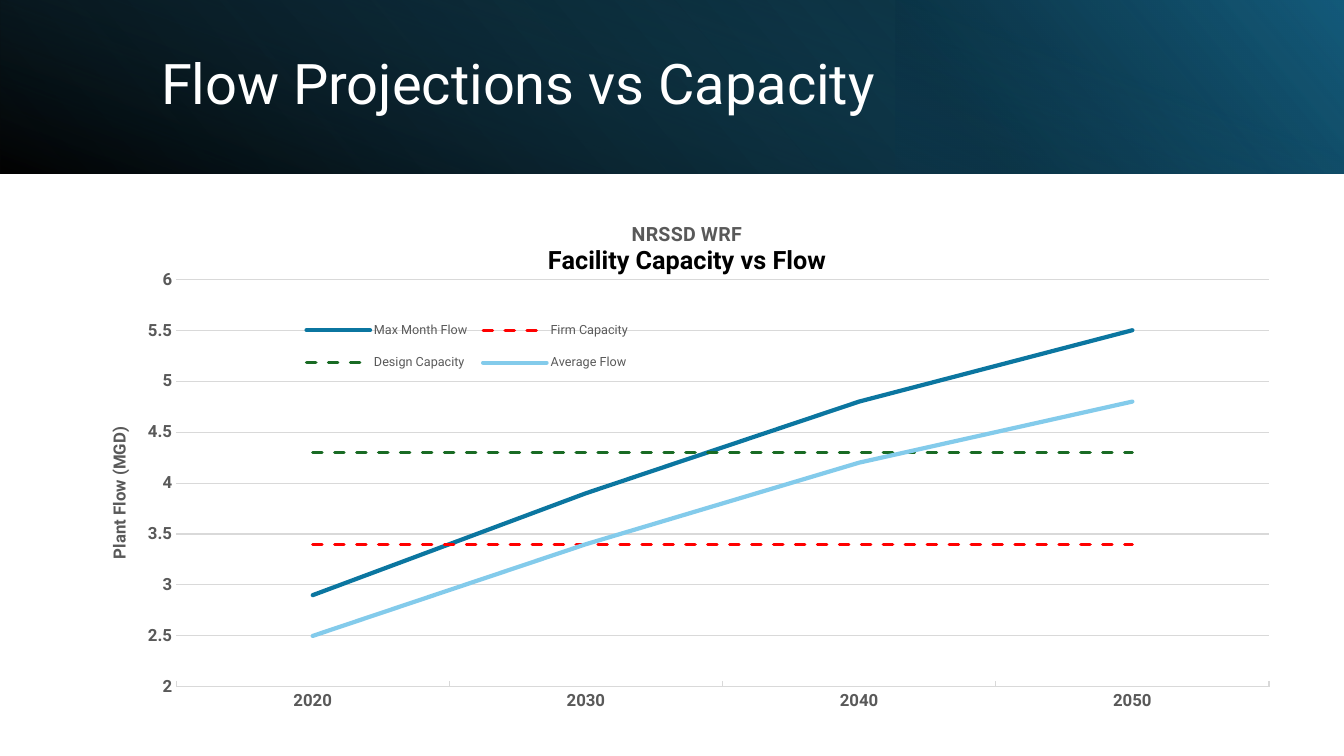
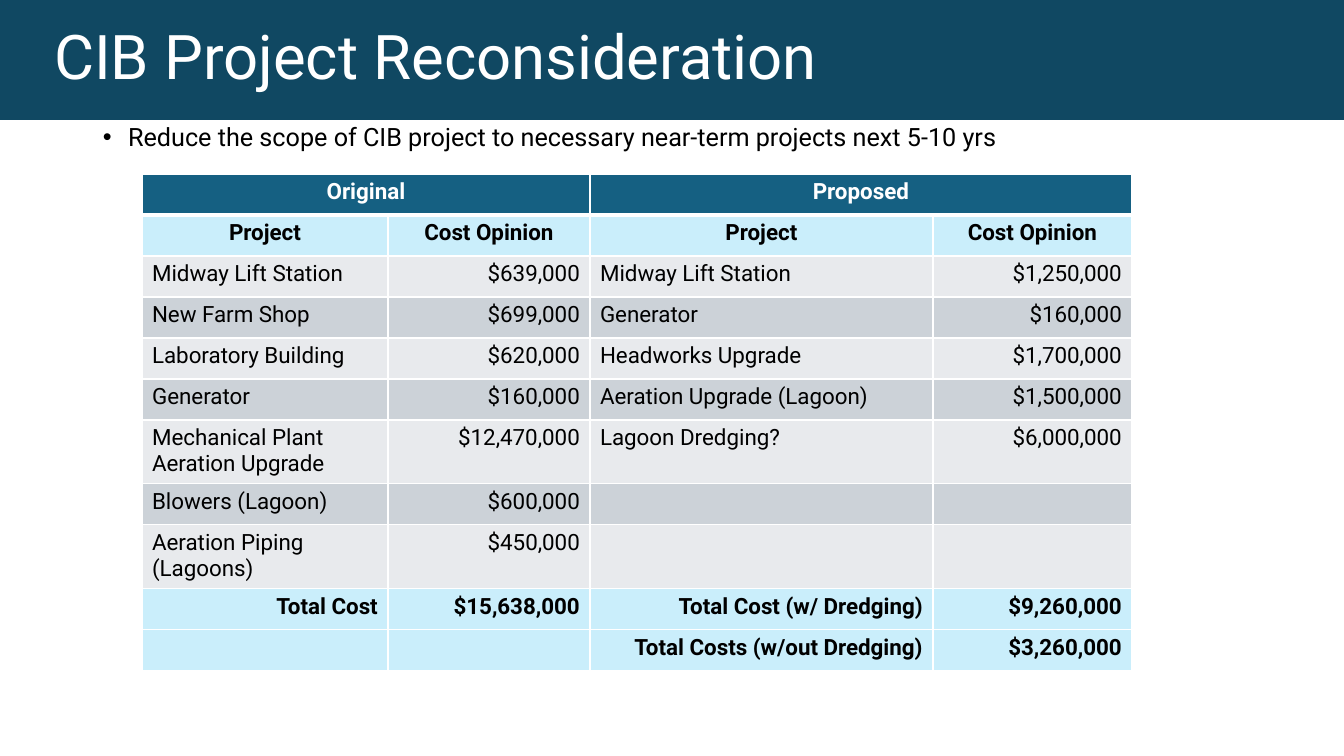
import pptx
import pptx.chart.data
import pptx.dml.color
import pptx.enum.chart
import pptx.enum.dml
import pptx.enum.shapes
import pptx.enum.text
import pptx.oxml
import pptx.oxml.ns
import pptx.util

PX = 914400 / 100.8
SLIDE_W, SLIDE_H = 1344, 756
FONT = "Roboto"
COLORS = {
    "white": "FFFFFF", "black": "000000", "gray": "595959", "grid": "D9D9D9",
    "navy": "104862", "deep": "0B3041", "teal": "156082", "pale": "CAEEFB",
    "light": "E8EAED", "mid": "CCD2D8",
    "max": "0B76A0", "firm": "FF0000", "design": "196B24", "average": "83CBEB",
}
ALIGN = pptx.enum.text.PP_ALIGN
qn = pptx.oxml.ns.qn


def px(n):
    return pptx.util.Emu(round(n * PX))


def rgb(name):
    return pptx.dml.color.RGBColor.from_string(COLORS[name])


def xml(text):
    """Parse a fragment that uses the a: and c: prefixes."""
    head, mark, tail = text.partition(" ")
    return pptx.oxml.parse_xml(f"{head} {pptx.oxml.ns.nsdecls('a', 'c')} {tail}")


def place(sp, box):
    sp.left, sp.top, sp.width, sp.height = map(px, box)


def set_font(font, size, color, bold=False):
    font.name, font.size, font.bold = FONT, pptx.util.Pt(size), bold
    font.color.rgb = rgb(color)


def add_run(p, text, size, color, bold=False):
    r = p.add_run()
    r.text = text
    set_font(r.font, size, color, bold)


def add_title_slide(prs, box, text, size, inset=10):
    s = prs.slides.add_slide(prs.slide_layouts[5])
    title = s.shapes.title
    place(title, box)
    tf = title.text_frame
    tf.auto_size = pptx.enum.text.MSO_AUTO_SIZE.NONE
    tf.word_wrap = True
    tf.vertical_anchor = pptx.enum.text.MSO_ANCHOR.MIDDLE
    tf.margin_left = px(inset)
    p = tf.paragraphs[0]
    p.alignment, p.line_spacing = ALIGN.LEFT, 0.9
    add_run(p, text, size, "white")
    return s


def add_gradient_rect(s, box, stops, angle, rotation=0, flip=False):
    """Stops are (position %, colour, opacity %); angle is clockwise degrees."""
    sp = s.shapes.add_shape(pptx.enum.shapes.MSO_SHAPE.RECTANGLE, *map(px, box))
    sp.shadow.inherit = False
    sp.line.fill.background()
    sp.rotation = rotation
    spPr = sp._element.spPr
    if flip:
        spPr.find(qn("a:xfrm")).set("flipH", "1")
    gs = "".join(
        f'<a:gs pos="{pos * 1000}"><a:srgbClr val="{COLORS[color]}">'
        f'<a:alpha val="{alpha * 1000}"/></a:srgbClr></a:gs>'
        for pos, color, alpha in stops)
    spPr.find(qn("a:prstGeom")).addnext(xml(
        f'<a:gradFill rotWithShape="1"><a:gsLst>{gs}</a:gsLst>'
        f'<a:lin ang="{angle * 60000}" scaled="0"/></a:gradFill>'))


def add_gradient_band(s, box):
    x, y, w, h = box
    add_gradient_rect(s, box, [(0, "black", 96), (100, "navy", 100)], 220, flip=True)
    add_gradient_rect(s, (x + w * 2 / 3, y, w / 3, h),
                      [(19, "deep", 68), (100, "teal", 79)], 40, 180, flip=True)
    upright = (x + (w - h) / 2, y + (h - w) / 2, h, w)
    add_gradient_rect(s, upright, [(23, "teal", 0), (99, "black", 74)], 20, 90)
    s.shapes._spTree.append(s.shapes.title._element)


def set_layout(parent, index, x, y, w=None, h=None, inner=False):
    """Fix a chart part at fractions of the chart box."""
    for old in parent.findall(qn("c:layout")):
        parent.remove(old)
    target = '<c:layoutTarget val="inner"/>' if inner else ""
    modes = '<c:xMode val="edge"/><c:yMode val="edge"/>'
    values = "".join(f'<c:{tag} val="{v}"/>' for tag, v in
                     zip("xywh", (x, y, w, h)) if v is not None)
    parent.insert(index, xml(
        f"<c:layout ><c:manualLayout>{target}{modes}{values}</c:manualLayout></c:layout>"))


def style_axis(axis, tick):
    set_font(axis.tick_labels.font, 12, "gray", True)
    axis.major_tick_mark = tick
    axis.minor_tick_mark = pptx.enum.chart.XL_TICK_MARK.NONE


def add_flow_chart(s, box):
    series = [
        ("Max Month Flow", (2.9, 3.9, 4.8, 5.5), "max", False),
        ("Firm Capacity", (3.4,) * 4, "firm", True),
        ("Design Capacity", (4.3,) * 4, "design", True),
        ("Average Flow", (2.5, 3.4, 4.2, 4.8), "average", False),
    ]
    data = pptx.chart.data.CategoryChartData()
    data.categories = ["2020", "2030", "2040", "2050"]
    for name, values, color, dashed in series:
        data.add_series(name, values)
    chart = s.shapes.add_chart(pptx.enum.chart.XL_CHART_TYPE.LINE,
                               *map(px, box), data).chart
    set_font(chart.font, 10, "black")
    plot = chart.plots[0]
    plot.vary_by_categories = False
    for ser, (name, values, color, dashed) in zip(plot.series, series):
        ser.smooth = False
        ser.marker.style = pptx.enum.chart.XL_MARKER_STYLE.NONE
        line = ser.format.line
        line.color.rgb = rgb(color)
        line.width = pptx.util.Pt(2.25 if dashed else 3)
        if dashed:
            line.dash_style = pptx.enum.dml.MSO_LINE.DASH
        line._get_or_add_ln().set("cap", "rnd")

    tick = pptx.enum.chart.XL_TICK_MARK
    years, flow = chart.category_axis, chart.value_axis
    style_axis(years, tick.INSIDE)
    style_axis(flow, tick.NONE)
    flow.minimum_scale, flow.maximum_scale, flow.major_unit = 2, 6, 0.5
    flow.format.line.fill.background()
    for line in (years.format.line, flow.major_gridlines.format.line):
        line.color.rgb = rgb("grid")
        line.width = pptx.util.Pt(0.75)
    add_run(flow.axis_title.text_frame.paragraphs[0], "Plant Flow (MGD)", 12, "gray", True)
    set_layout(flow.axis_title._element, 1, 0.01, 0.43)

    tf = chart.chart_title.text_frame
    add_run(tf.paragraphs[0], "NRSSD WRF", 14, "gray", True)
    add_run(tf.add_paragraph(), "Facility Capacity vs Flow", 18, "black", True)

    chart.has_legend = True
    legend = chart.legend
    legend.position = pptx.enum.chart.XL_LEGEND_POSITION.TOP
    legend.include_in_layout = False
    set_font(legend.font, 9, "gray")
    set_layout(legend._element, 1, 0.17, 0.2, 0.29, 0.16)
    plot_area = chart._chartSpace.find(qn("c:chart")).find(qn("c:plotArea"))
    set_layout(plot_area, 0, 0.07, 0.15, 0.92, 0.79, inner=True)


def add_bullet(s, box, text):
    tf = s.shapes.add_textbox(*map(px, box)).text_frame
    tf.word_wrap = True
    p = tf.paragraphs[0]
    p.line_spacing = 0.9
    add_run(p, text, 18, "black")
    pPr = p._p.get_or_add_pPr()
    pPr.set("marL", "228600")
    pPr.set("indent", "-228600")
    pPr.append(xml('<a:buFont typeface="Arial"/>'))
    pPr.append(xml('<a:buChar char="•"/>'))


def style_cell(cell, text, fill, color, bold, align, bottom):
    tcPr = cell._tc.get_or_add_tcPr()
    for side, width in (("L", 1), ("R", 1), ("T", 1), ("B", bottom)):
        tcPr.append(xml(
            f'<a:ln{side} w="{width * 12700}"><a:solidFill><a:srgbClr '
            f'val="{COLORS["white"]}"/></a:solidFill></a:ln{side}>'))
    cell.fill.solid()
    cell.fill.fore_color.rgb = rgb(fill)
    if text:
        p = cell.text_frame.paragraphs[0]
        p.alignment = align
        add_run(p, text, 16, color, bold)


def add_cost_table(s, left, top):
    widths = [246, 202, 343, 199]
    rows = [
        ("Original", "", "Proposed", ""),
        ("Project", "Cost Opinion", "Project", "Cost Opinion"),
        ("Midway Lift Station", "$639,000", "Midway Lift Station", "$1,250,000"),
        ("New Farm Shop", "$699,000", "Generator", "$160,000"),
        ("Laboratory Building", "$620,000", "Headworks Upgrade", "$1,700,000"),
        ("Generator", "$160,000", "Aeration Upgrade (Lagoon)", "$1,500,000"),
        ("Mechanical Plant Aeration Upgrade", "$12,470,000", "Lagoon Dredging?", "$6,000,000"),
        ("Blowers (Lagoon)", "$600,000", "", ""),
        ("Aeration Piping (Lagoons)", "$450,000", "", ""),
        ("Total Cost", "$15,638,000", "Total Cost (w/ Dredging)", "$9,260,000"),
        ("", "", "Total Costs (w/out Dredging)", "$3,260,000"),
    ]
    heights = [62 if len(row[0]) > 20 else 41 for row in rows]
    first_total = len(rows) - 2
    table = s.shapes.add_table(len(rows), len(widths), px(left), px(top),
                               px(sum(widths)), px(sum(heights))).table
    table.horz_banding = False
    for col, width in zip(table.columns, widths):
        col.width = px(width)
    for i, (row, height) in enumerate(zip(rows, heights)):
        table.rows[i].height = px(height)
        head, total = i < 2, i >= first_total
        fill = "teal" if i == 0 else "pale" if head or total else ("light", "mid")[i % 2]
        for j, text in enumerate(row):
            align = (ALIGN.CENTER if head else
                     ALIGN.RIGHT if total or j % 2 else ALIGN.LEFT)
            style_cell(table.cell(i, j), text, fill, "white" if i == 0 else "black",
                       head or total, align, 3 if i == 0 else 1)
    for j in (0, 2):
        table.cell(0, j).merge(table.cell(0, j + 1))


def build_flow_slide(prs):
    s = add_title_slide(prs, (151, 38, 1107, 97), "Flow Projections vs Capacity", 40)
    add_gradient_band(s, (0, 0, SLIDE_W, 174))
    add_flow_chart(s, (93, 202, 1188, 516))


def build_cost_slide(prs):
    s = add_title_slide(prs, (0, 0, SLIDE_W, 120), "CIB Project Reconsideration", 44, 54)
    fill = s.shapes.title.fill
    fill.solid()
    fill.fore_color.rgb = rgb("navy")
    add_bullet(s, (93, 120, 1159, 40),
               "Reduce the scope of CIB project to necessary near-term projects next 5-10 yrs")
    add_cost_table(s, 142, 174)


def main():
    prs = pptx.Presentation()
    prs.slide_width, prs.slide_height = px(SLIDE_W), px(SLIDE_H)
    build_flow_slide(prs)
    build_cost_slide(prs)
    prs.save("out.pptx")


if __name__ == "__main__":
    main()
